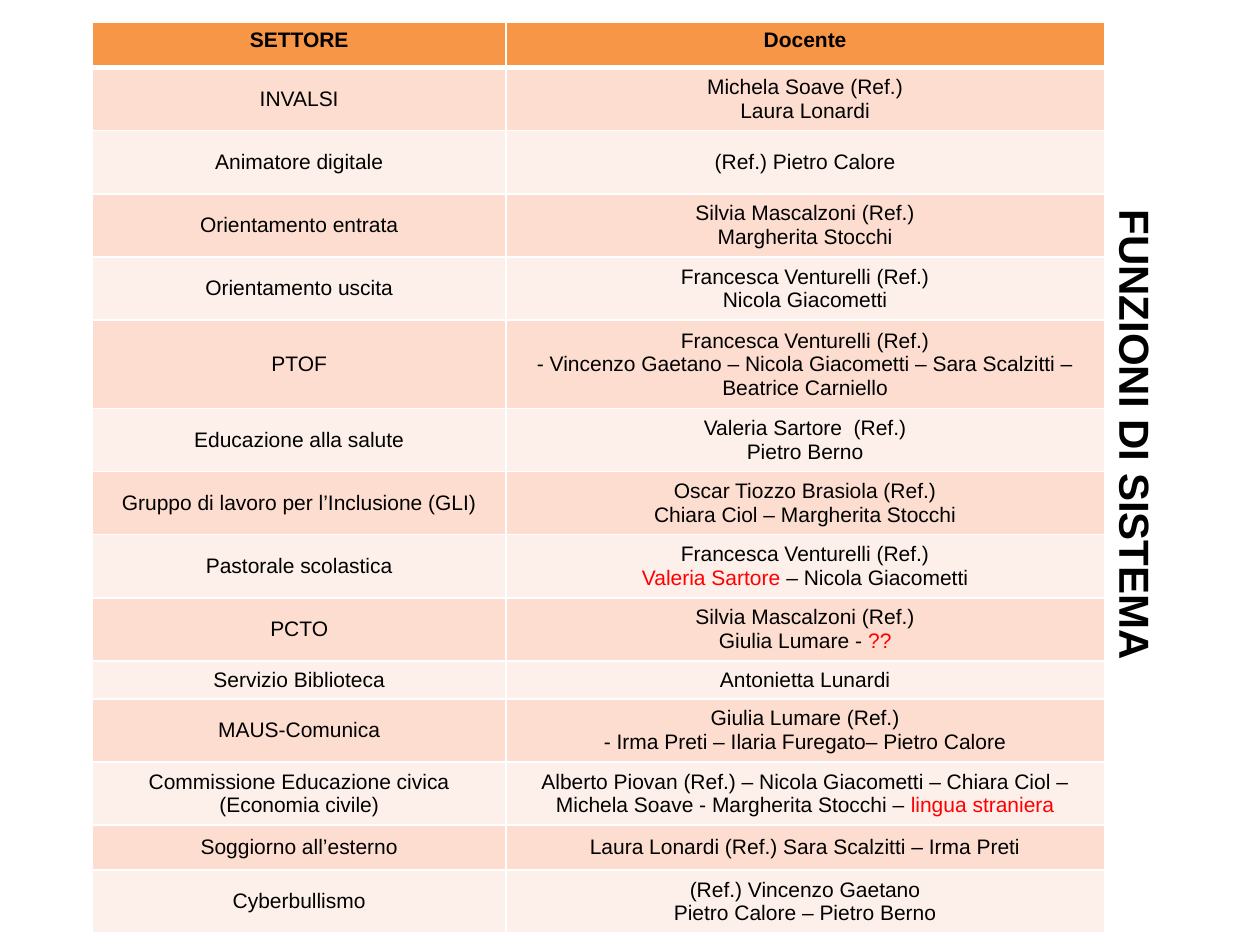
from dataclasses import dataclass

from lxml import etree
from pptx import Presentation
from pptx.dml.color import RGBColor
from pptx.enum.text import MSO_ANCHOR, MSO_AUTO_SIZE, PP_ALIGN
from pptx.oxml.ns import qn
from pptx.util import Pt

CENTER = PP_ALIGN.CENTER
TOP, MIDDLE = MSO_ANCHOR.TOP, MSO_ANCHOR.MIDDLE
FIT_SHAPE = MSO_AUTO_SIZE.SHAPE_TO_FIT_TEXT


@dataclass(frozen=True)
class Theme:
    font: str = "Arial"
    title_size: float = 24
    body_size: float = 12
    text: str = "000000"
    accent: str = "FF0000"
    header: str = "F79646"
    band_dark: str = "FCDDCF"
    band_light: str = "FDEFE9"
    border: str = "FFFFFF"
    border_width: float = 1
    header_rule: float = 3


@dataclass(frozen=True)
class Run:
    text: str
    color: str


@dataclass(frozen=True)
class Sector:
    name: str
    teachers: tuple[tuple[Run, ...], ...]
    height: float


THEME = Theme()
TWO_LINES = 36.1
HEADER_HEIGHT = 25.7
COLUMN_WIDTHS = (236.2, 342)


def plain(text: str) -> Run:
    return Run(text, THEME.text)


def red(text: str) -> Run:
    return Run(text, THEME.accent)


def sector(name: str, *lines: str | tuple[Run, ...], height: float = TWO_LINES) -> Sector:
    """Describe one row; a line given as a string is a single plain run."""
    teachers = tuple((plain(x),) if isinstance(x, str) else x for x in lines)
    return Sector(name, teachers, height)


SECTORS = (
    sector("INVALSI", "Michela Soave (Ref.)", "Laura Lonardi"),
    sector("Animatore digitale", "(Ref.) Pietro Calore"),
    sector("Orientamento entrata", "Silvia Mascalzoni (Ref.)", "Margherita Stocchi"),
    sector("Orientamento uscita", "Francesca Venturelli (Ref.)", "Nicola Giacometti"),
    sector("PTOF", "Francesca Venturelli (Ref.)",
           "- Vincenzo Gaetano – Nicola Giacometti – Sara Scalzitti – Beatrice Carniello",
           height=50.2),
    sector("Educazione alla salute", "Valeria Sartore  (Ref.)", "Pietro Berno"),
    sector("Gruppo di lavoro per l’Inclusione (GLI)", "Oscar Tiozzo Brasiola (Ref.)",
           "Chiara Ciol – Margherita Stocchi"),
    sector("Pastorale scolastica", "Francesca Venturelli (Ref.)",
           (red("Valeria Sartore "), plain("– Nicola Giacometti"))),
    sector("PCTO", "Silvia Mascalzoni (Ref.)", (plain("Giulia Lumare - "), red("??"))),
    sector("Servizio Biblioteca", "Antonietta Lunardi", height=21.6),
    sector("MAUS-Comunica", "Giulia Lumare (Ref.)",
           "- Irma Preti – Ilaria Furegato– Pietro Calore"),
    sector("Commissione Educazione civica (Economia civile)",
           (plain("Alberto Piovan (Ref.) – Nicola Giacometti – Chiara Ciol – "
                  "Michela Soave - Margherita Stocchi – "), red("lingua straniera"))),
    sector("Soggiorno all’esterno", "Laura Lonardi (Ref.) Sara Scalzitti – Irma Preti",
           height=25.7),
    sector("Cyberbullismo", "(Ref.) Vincenzo Gaetano", "Pietro Calore – Pietro Berno"),
)


def write_lines(tf, lines: tuple[tuple[Run, ...], ...], size: float, bold: bool) -> None:
    for i, runs in enumerate(lines):
        p = tf.add_paragraph() if i else tf.paragraphs[0]
        p.alignment = CENTER
        for run in runs:
            r = p.add_run()
            r.text = run.text
            r.font.name = THEME.font
            r.font.size = Pt(size)
            r.font.bold = bold
            r.font.color.rgb = RGBColor.from_string(run.color)


def set_borders(cell, top: float, bottom: float) -> None:
    """Draw the four cell borders, which must come before the fill in tcPr."""
    tc_pr = cell._tc.get_or_add_tcPr()
    side = THEME.border_width
    edges = (("L", side), ("R", side), ("T", top), ("B", bottom))
    for i, (edge, width) in enumerate(edges):
        ln = etree.Element(qn(f"a:ln{edge}"), w=str(Pt(width)))
        fill = etree.SubElement(ln, qn("a:solidFill"))
        etree.SubElement(fill, qn("a:srgbClr"), val=THEME.border)
        tc_pr.insert(i, ln)


def fill_row(table, index: int, cells: tuple, height: float, color: str) -> None:
    is_header = index == 0
    top = THEME.header_rule if index == 1 else THEME.border_width
    bottom = THEME.header_rule if is_header else THEME.border_width
    table.rows[index].height = Pt(height)
    for cell, lines in zip(table.rows[index].cells, cells):
        cell.fill.solid()
        cell.fill.fore_color.rgb = RGBColor.from_string(color)
        cell.vertical_anchor = TOP if is_header else MIDDLE
        set_borders(cell, top, bottom)
        write_lines(cell.text_frame, lines, THEME.body_size, is_header)


def add_sector_table(s) -> None:
    height = HEADER_HEIGHT + sum(x.height for x in SECTORS)
    table = s.shapes.add_table(len(SECTORS) + 1, len(COLUMN_WIDTHS), Pt(52.9), Pt(12.9),
                               Pt(sum(COLUMN_WIDTHS)), Pt(height)).table
    for column, width in zip(table.columns, COLUMN_WIDTHS):
        column.width = Pt(width)
    headings = tuple(((plain(x),),) for x in ("SETTORE", "Docente"))
    fill_row(table, 0, headings, HEADER_HEIGHT, THEME.header)
    for i, row in enumerate(SECTORS, start=1):
        color = THEME.band_dark if i % 2 else THEME.band_light
        fill_row(table, i, (((plain(row.name),),), row.teachers), row.height, color)


def add_side_title(s, text: str) -> None:
    sp = s.shapes.add_textbox(Pt(357.1), Pt(230.4), Pt(584), Pt(36))
    sp.rotation = 90
    tf = sp.text_frame
    tf.word_wrap = True
    tf.auto_size = FIT_SHAPE
    write_lines(tf, ((plain(text),),), THEME.title_size, True)


def main() -> None:
    prs = Presentation()
    prs.slide_width, prs.slide_height = Pt(720), Pt(540)
    s = prs.slides.add_slide(prs.slide_layouts[6])
    add_side_title(s, "FUNZIONI DI SISTEMA")
    add_sector_table(s)
    prs.save("out.pptx")


if __name__ == "__main__":
    main()
